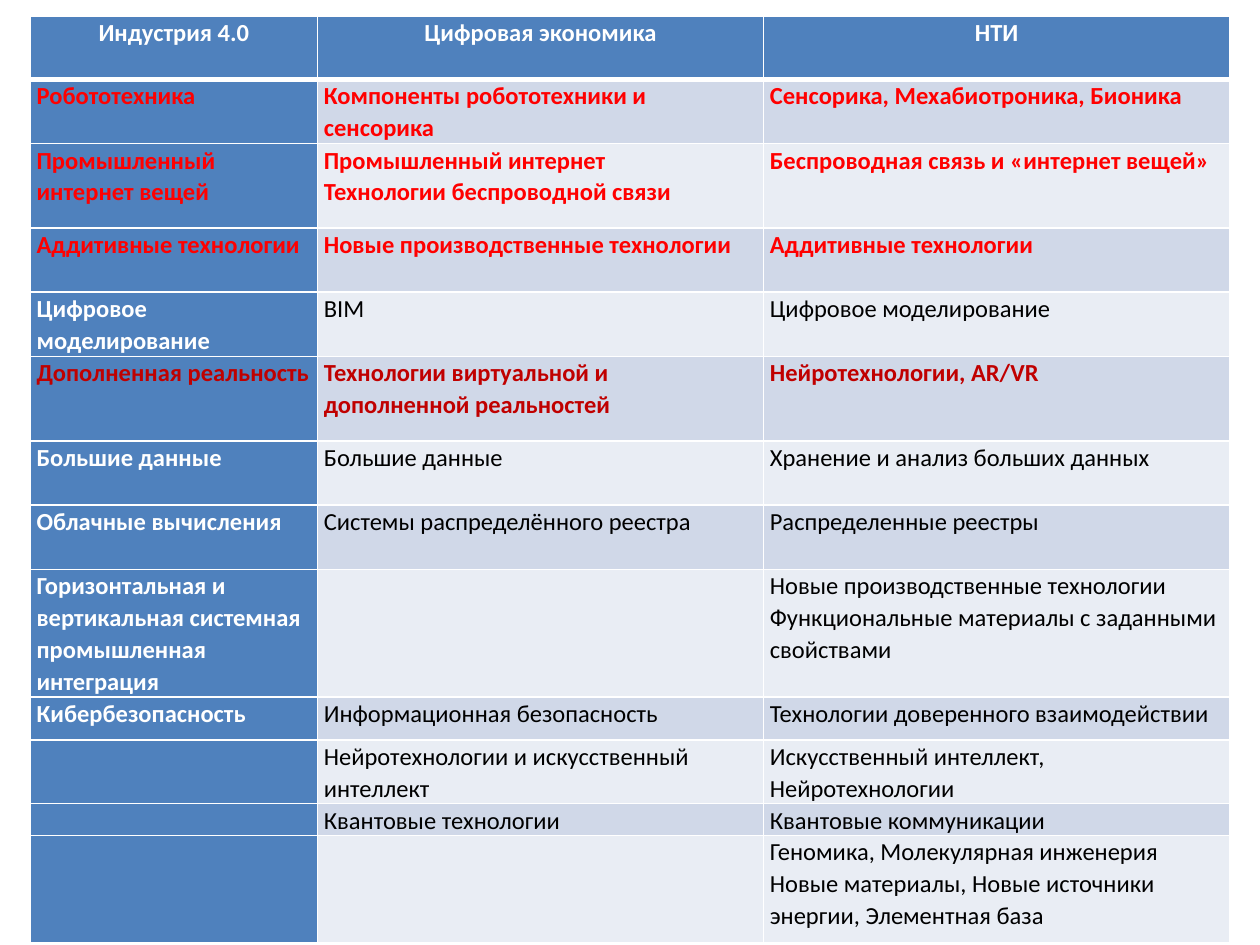
from dataclasses import dataclass

from lxml import etree
from pptx import Presentation
from pptx.dml.color import RGBColor
from pptx.enum.text import PP_ALIGN
from pptx.oxml.ns import qn
from pptx.util import Inches, Pt


@dataclass(frozen=True)
class Theme:
    font: str = "Calibri"
    size: int = 14
    spacing: float = 1.07
    blue: str = "4F81BD"
    band_dark: str = "D0D8E8"
    band_light: str = "E9EDF4"
    white: str = "FFFFFF"
    black: str = "000000"
    red: str = "FF0000"
    dark_red: str = "C00000"


T = Theme()

HEADER = ("Индустрия 4.0", "Цифровая экономика", "НТИ")
COL_WIDTHS = (2.28, 3.54, 3.7)
HEADER_HEIGHT = 0.5

# height, highlight colour, cell texts (one paragraph per line)
ROWS = [
    (0.51, T.red, ("Робототехника", "Компоненты робототехники и сенсорика",
                   "Сенсорика, Мехабиотроника, Бионика")),
    (0.67, T.red, ("Промышленный интернет вещей",
                   "Промышленный интернет\nТехнологии беспроводной связи",
                   "Беспроводная связь и «интернет вещей»")),
    (0.51, T.red, ("Аддитивные технологии", "Новые производственные технологии",
                   "Аддитивные технологии")),
    (0.51, None, ("Цифровое моделирование", "BIM", "Цифровое моделирование")),
    (0.67, T.dark_red, ("Дополненная реальность",
                        "Технологии виртуальной и дополненной реальностей",
                        "Нейротехнологии, AR/VR")),
    (0.51, None, ("Большие данные", "Большие данные",
                  "Хранение и анализ больших данных")),
    (0.51, None, ("Облачные вычисления", "Системы распределённого реестра",
                  "Распределенные реестры")),
    (1.01, None, ("Горизонтальная и вертикальная системная промышленная интеграция",
                  "",
                  "Новые производственные технологии\n"
                  "Функциональные материалы с заданными свойствами")),
    (0.34, None, ("Кибербезопасность", "Информационная безопасность",
                  "Технологии доверенного взаимодействии")),
    (0.5, None, ("", "Нейротехнологии и искусственный интеллект",
                 "Искусственный интеллект, Нейротехнологии")),
    (0.25, None, ("", "Квантовые технологии", "Квантовые коммуникации")),
    (0.85, None, ("", "",
                  "Геномика, Молекулярная инженерия\n"
                  "Новые материалы, Новые источники энергии, Элементная база")),
]


def set_borders(cell, bottom):
    """Put white lines round a cell; they must come before its fill."""
    tc_pr = cell._tc.get_or_add_tcPr()
    for tag, width in (("lnL", 1), ("lnR", 1), ("lnT", 1), ("lnB", bottom)):
        ln = etree.SubElement(tc_pr, qn(f"a:{tag}"), w=str(Pt(width)))
        fill = etree.SubElement(ln, qn("a:solidFill"))
        etree.SubElement(fill, qn("a:srgbClr"), val=T.white)


def fill_cell(cell, text, fill, color, bold, align=PP_ALIGN.LEFT, bottom=1):
    set_borders(cell, bottom)
    cell.fill.solid()
    cell.fill.fore_color.rgb = RGBColor.from_string(fill)
    cell.margin_left = cell.margin_right = Inches(0.05)
    cell.margin_top = cell.margin_bottom = 0
    tf = cell.text_frame
    tf.text = text
    for p in tf.paragraphs:
        p.alignment = align
        p.line_spacing = T.spacing
        p.font.name = T.font
        p.font.size = Pt(T.size)
        p.font.bold = bold
        p.font.color.rgb = RGBColor.from_string(color)
        if not p.runs:  # an empty cell takes its line height from the end mark
            etree.SubElement(p._p, qn("a:endParaRPr"), sz=str(T.size * 100))


def add_comparison_table(s, left, top):
    heights = [HEADER_HEIGHT] + [height for height, _, _ in ROWS]
    table = s.shapes.add_table(
        len(heights), len(COL_WIDTHS), Inches(left), Inches(top),
        Inches(sum(COL_WIDTHS)), Inches(sum(heights))).table
    for column, width in zip(table.columns, COL_WIDTHS):
        column.width = Inches(width)
    for row, height in zip(table.rows, heights):
        row.height = Inches(height)

    for c, text in enumerate(HEADER):
        fill_cell(table.cell(0, c), text, T.blue, T.white, True,
                  PP_ALIGN.CENTER, bottom=3)
    for r, (_, highlight, texts) in enumerate(ROWS, start=1):
        band = T.band_dark if r % 2 else T.band_light
        for c, text in enumerate(texts):
            first = c == 0
            fill_cell(table.cell(r, c), text, T.blue if first else band,
                      highlight or (T.white if first else T.black),
                      first or highlight is not None)


def main():
    prs = Presentation()
    prs.slide_width, prs.slide_height = Inches(10), Inches(7.5)
    s = prs.slides.add_slide(prs.slide_layouts[6])
    add_comparison_table(s, 0.24, 0.13)
    prs.save("out.pptx")


if __name__ == "__main__":
    main()
